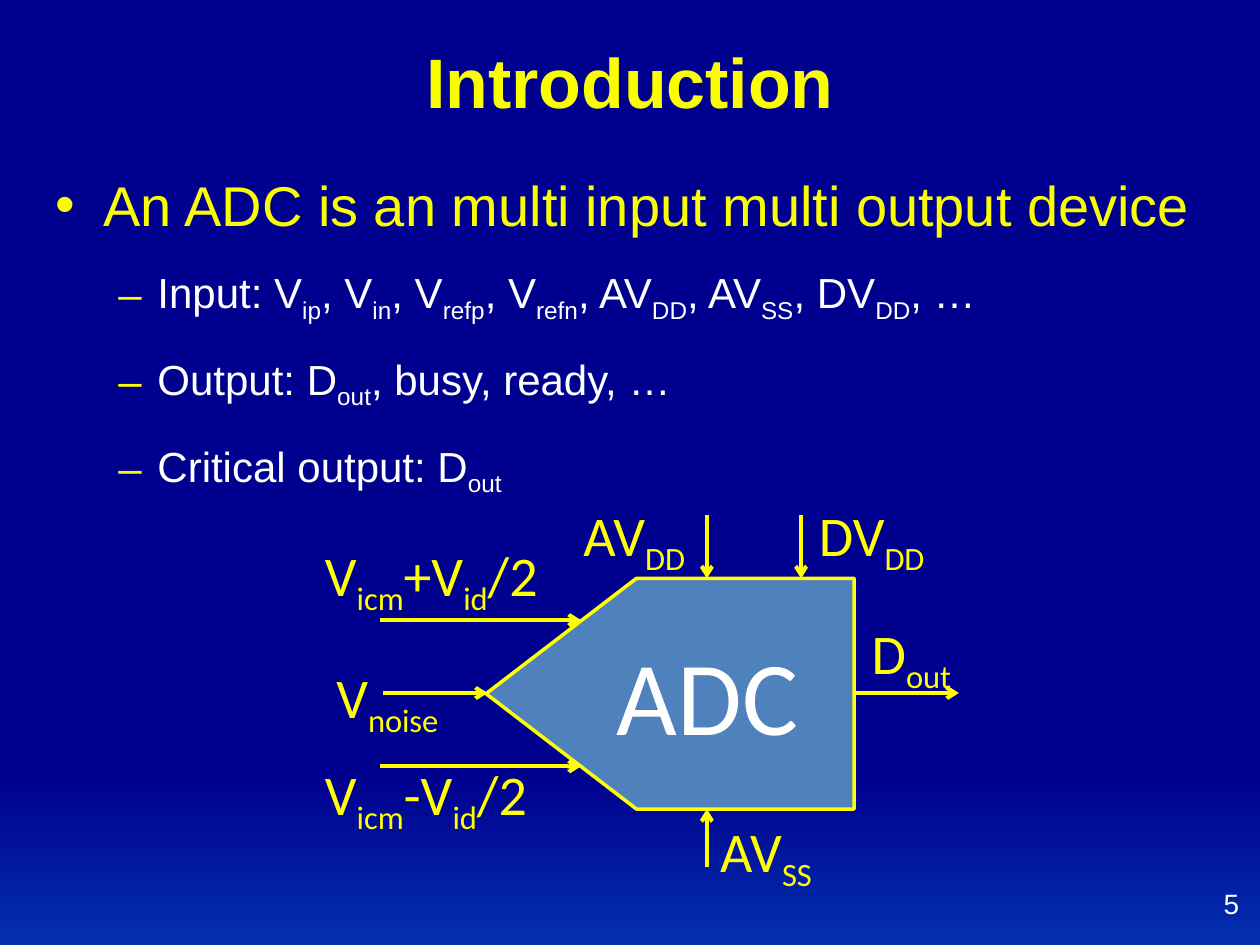
from lxml import etree
from pptx import Presentation
from pptx import util as u
from pptx.dml.color import RGBColor
from pptx.enum import shapes, text
from pptx.oxml import ns

GOLD = RGBColor(0xFA, 0xFD, 0x00)
YELLOW = RGBColor(0xFF, 0xFF, 0x00)
WHITE = RGBColor(0xFF, 0xFF, 0xFF)
STEEL = RGBColor(0x4F, 0x81, 0xBD)
NAVY = RGBColor(0x00, 0x00, 0x8E)
ROYAL = RGBColor(0x03, 0x30, 0xAF)

TITLE = {"name": "Arial", "size": u.Pt(40), "bold": True}
TOPIC = {"name": "Arial", "size": u.Pt(32)}
DETAIL = {"name": "Arial", "size": u.Pt(24)}
NUMBER = {"name": "Arial", "size": u.Pt(16)}
BLOCK = {"name": "Calibri", "size": u.Pt(60)}
LABEL = {"name": "Calibri", "size": u.Pt(32)}

BULLETS = [
    (0, "An ADC is an multi input multi output device"),
    (1, "Input: V|ip|, V|in|, V|refp|, V|refn|, AV|DD|, AV|SS|, DV|DD|, …"),
    (1, "Output: D|out|, busy, ready, …"),
    (1, "Critical output: D|out"),
]
LEVELS = [
    ("•", 0.97, -0.97, TOPIC, GOLD),
    ("–", 2.06, -0.79, DETAIL, WHITE),
]
ARROWS = [
    (7.67, 12.5, 11.71, 12.5),
    (7.72, 13.97, 9.83, 13.97),
    (7.67, 15.45, 11.71, 15.45),
    (17.2, 13.97, 19.33, 13.97),
    (14.25, 10.39, 14.25, 11.66),
    (16.15, 10.39, 16.15, 11.66),
    (14.25, 17.48, 14.25, 16.31),
]
LABELS = [
    ("D|out", 17.32, 12.34, 2.26, False),
    ("AV|DD", 11.51, 9.96, 2.74, False),
    ("AV|SS", 14.27, 16.33, 2.51, False),
    ("DV|DD", 16.26, 9.96, 2.79, False),
    ("V|icm|+V|id|/2", 6.3, 10.77, 6.05, True),
    ("V|noise", 6.53, 13.23, 2.82, False),
    ("V|icm|-V|id|/2", 6.3, 15.19, 6.05, True),
]


def apply(obj, values):
    for key, value in values.items():
        setattr(obj, key, value)


def cm(*lengths):
    return [u.Cm(length) for length in lengths]


def place(sp, *box):
    apply(sp, dict(zip(("left", "top", "width", "height"), cm(*box))))


def write(p, content, font, color):
    for i, part in enumerate(content.split("|")):
        r = p.add_run()
        r.text = part
        apply(r.font, font)
        r.font.color.rgb = color
        if i % 2:
            r._r.get_or_add_rPr().set("baseline", "-25000")


def set_background(s):
    fill = s.background.fill
    fill.gradient()
    fill.gradient_angle = 270
    for stop, position, color in zip(fill.gradient_stops, (0.82, 1), (NAVY, ROYAL)):
        stop.position = position
        stop.color.rgb = color


def add_title(s):
    sp = s.shapes.title
    place(sp, 0, 0.36, 25.4, 2.24)
    tf = sp.text_frame
    apply(tf, {"vertical_anchor": text.MSO_ANCHOR.BOTTOM,
               "auto_size": text.MSO_AUTO_SIZE.NONE})
    p = tf.paragraphs[0]
    p.alignment = text.PP_ALIGN.CENTER
    write(p, "Introduction", TITLE, GOLD)


def set_bullet(p, char, margin, indent):
    pPr = p._p.get_or_add_pPr()
    pPr.set("marL", str(u.Cm(margin)))
    pPr.set("indent", str(u.Cm(indent)))
    color = etree.SubElement(pPr, ns.qn("a:buClr"))
    etree.SubElement(color, ns.qn("a:srgbClr")).set("val", str(GOLD))
    etree.SubElement(pPr, ns.qn("a:buChar")).set("char", char)


def add_bullets(s):
    sp = s.placeholders[1]
    place(sp, 0.86, 3.3, 23.98, 14.2)
    tf = sp.text_frame
    tf.auto_size = text.MSO_AUTO_SIZE.NONE
    for i, (level, content) in enumerate(BULLETS):
        p = tf.add_paragraph() if i else tf.paragraphs[0]
        char, margin, indent, font, color = LEVELS[level]
        apply(p, {"level": level, "space_after": u.Pt(12)})
        set_bullet(p, char, margin, indent)
        write(p, content, font, color)


def add_number(s):
    tf = s.shapes.add_textbox(*cm(23.93, 17.58, 1.3, 1.27)).text_frame
    apply(tf, {"word_wrap": False, "vertical_anchor": text.MSO_ANCHOR.MIDDLE})
    p = tf.paragraphs[0]
    p.alignment = text.PP_ALIGN.RIGHT
    write(p, "5", NUMBER, WHITE)


def add_converter(s):
    sp = s.shapes.add_shape(shapes.MSO_SHAPE.PENTAGON, *cm(9.8, 11.66, 7.42, 4.65))
    sp.adjustments[0] = 0.652
    sp.shadow.inherit = False
    sp._element.spPr.find(ns.qn("a:xfrm")).set("flipH", "1")
    sp.fill.solid()
    sp.fill.fore_color.rgb = STEEL
    sp.line.color.rgb = YELLOW
    sp.line.width = u.Pt(2)
    tf = sp.text_frame
    tf.vertical_anchor = text.MSO_ANCHOR.MIDDLE
    p = tf.paragraphs[0]
    p.alignment = text.PP_ALIGN.CENTER
    write(p, "ADC", BLOCK, WHITE)


def add_arrow(s, *ends):
    sp = s.shapes.add_connector(shapes.MSO_CONNECTOR.STRAIGHT, *cm(*ends))
    sp.line.color.rgb = YELLOW
    sp.line.width = u.Pt(2.25)
    etree.SubElement(sp.line._get_or_add_ln(), ns.qn("a:tailEnd")).set("type", "arrow")
    etree.SubElement(sp._element.spPr, ns.qn("a:effectLst"))


def add_label(s, content, left, top, width, wrap):
    tf = s.shapes.add_textbox(*cm(left, top, width, 1.63)).text_frame
    apply(tf, {"word_wrap": wrap, "auto_size": text.MSO_AUTO_SIZE.SHAPE_TO_FIT_TEXT})
    write(tf.paragraphs[0], content, LABEL, YELLOW)


def main():
    prs = Presentation()
    apply(prs, {"slide_width": u.Cm(25.4), "slide_height": u.Cm(19.05)})
    s = prs.slides.add_slide(prs.slide_layouts[1])
    set_background(s)
    add_title(s)
    add_bullets(s)
    add_number(s)
    add_converter(s)
    for arrow in ARROWS:
        add_arrow(s, *arrow)
    for label in LABELS:
        add_label(s, *label)
    prs.save("out.pptx")


if __name__ == "__main__":
    main()
